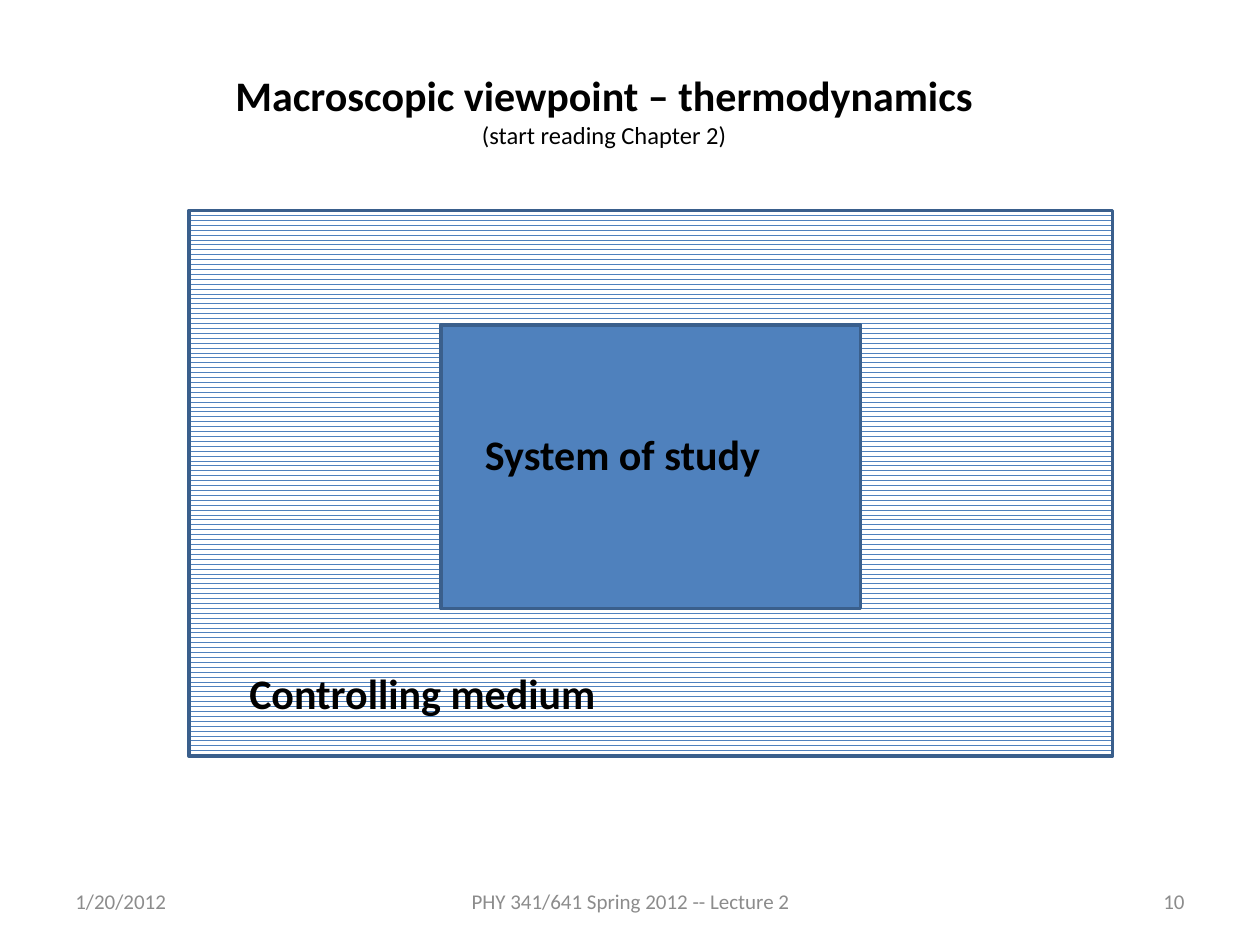
from pptx import Presentation
from pptx.dml.color import RGBColor
from pptx.enum import dml, shapes, text
from pptx.util import Inches, Pt

FONT = "Calibri"
BLACK, GREY, WHITE = "000000", "8C8C8C", "FFFFFF"
BLUE, OUTLINE = "4F81BD", "3A5F8C"
LEFT, CENTER, RIGHT = text.PP_ALIGN.LEFT, text.PP_ALIGN.CENTER, text.PP_ALIGN.RIGHT


def color(value):
    """Turn a hex string into a colour."""
    return RGBColor.from_string(value)


def add_label(slide, box, lines, align=LEFT, ink=BLACK, anchor=text.MSO_ANCHOR.TOP):
    """Add a text box whose lines are (wording, size, bold)."""
    label = slide.shapes.add_textbox(*map(Inches, box))
    frame = label.text_frame
    frame.word_wrap = True
    frame.vertical_anchor = anchor
    frame.text = "\n".join(wording for wording, _, _ in lines)
    for paragraph, (_, size, bold) in zip(frame.paragraphs, lines):
        paragraph.alignment = align
        font = paragraph.runs[0].font
        font.name, font.size, font.bold = FONT, Pt(size), bold
        font.color.rgb = color(ink)
    return label


def add_heading(slide, box, lines, align=LEFT):
    """Add a label that grows with its text."""
    heading = add_label(slide, box, lines, align)
    heading.text_frame.auto_size = text.MSO_AUTO_SIZE.SHAPE_TO_FIT_TEXT


def add_region(slide, box, pattern=None):
    """Add an outlined rectangle with a solid or patterned fill."""
    region = slide.shapes.add_shape(shapes.MSO_SHAPE.RECTANGLE, *map(Inches, box))
    region.shadow.inherit = False
    region.line.color.rgb = color(OUTLINE)
    region.line.width = Pt(2)
    if pattern is None:
        region.fill.solid()
    else:
        region.fill.patterned()
        region.fill.pattern = pattern
        region.fill.back_color.rgb = color(WHITE)
    region.fill.fore_color.rgb = color(BLUE)


def add_footer(slide):
    """Add the date, the course and the page number."""
    entries = [
        (0.5, 2.33, "1/20/2012", LEFT),
        (3.42, 3.17, "PHY 341/641 Spring 2012 -- Lecture 2", CENTER),
        (7.17, 2.33, "10", RIGHT),
    ]
    for left, width, wording, align in entries:
        add_label(slide, (left, 6.95, width, 0.4), [(wording, 12, False)],
                  align, GREY, text.MSO_ANCHOR.MIDDLE)


def main():
    """Build the slide and save it."""
    deck = Presentation()
    deck.slide_width, deck.slide_height = Inches(10), Inches(7.5)
    slide = deck.slides.add_slide(deck.slide_layouts[6])
    add_footer(slide)
    add_heading(slide, (0.67, 0.5, 8.25, 0.74),
                [("Macroscopic viewpoint – thermodynamics", 24, True),
                 ("(start reading Chapter 2)", 14, False)], CENTER)
    add_region(slide, (1.5, 1.67, 7.33, 4.33), dml.MSO_PATTERN.WAVE)
    add_region(slide, (3.5, 2.58, 3.33, 2.25))
    add_heading(slide, (3.75, 3.35, 2.92, 0.5), [("System of study", 24, True)])
    add_heading(slide, (1.88, 5.25, 6.58, 0.5), [("Controlling medium", 24, True)])
    deck.save("out.pptx")


if __name__ == "__main__":
    main()
